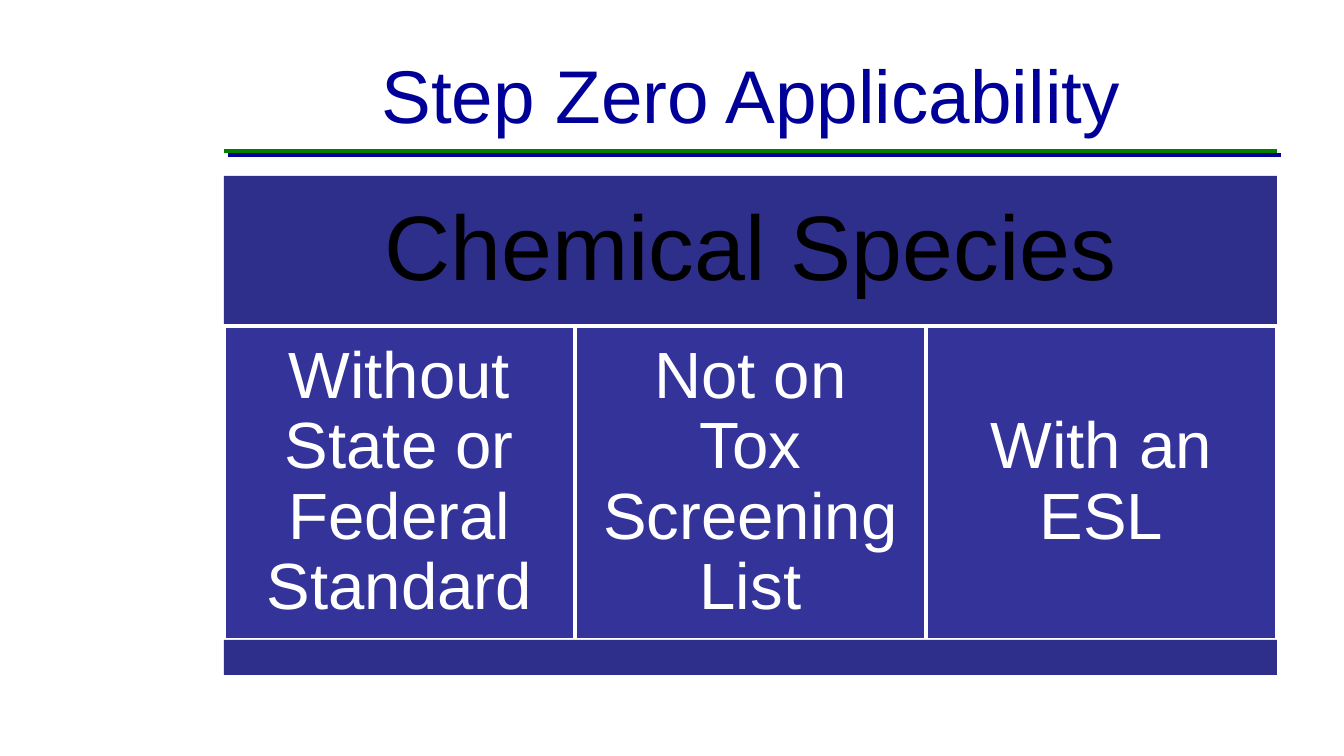
from lxml import etree
from pptx import Presentation
from pptx import util as u
from pptx.dml.color import RGBColor
from pptx.enum import shapes, text
from pptx.oxml import ns

PX = 914400 / 134.4
FONT = "Arial"
COLORS = {
    "title": "000099",
    "rule": "008000",
    "shade": "C0C0C0",
    "band": "2E2E8B",
    "cell": "333399",
    "heading": "000000",
    "white": "FFFFFF",
}


def px(length):
    return u.Emu(round(length * PX))


def rgb(name):
    return RGBColor.from_string(COLORS[name])


def shadow(color):
    effects = etree.Element(ns.qn("a:effectLst"))
    outer = etree.SubElement(effects, ns.qn("a:outerShdw"), blurRad="0",
                             dist=str(u.Pt(2.8)), dir="2700000", algn="ctr", rotWithShape="0")
    etree.SubElement(outer, ns.qn("a:srgbClr"), val=COLORS[color])
    return effects


class Deck:
    def __init__(self, width, height):
        self.presentation = Presentation()
        self.presentation.slide_width = px(width)
        self.presentation.slide_height = px(height)
        self.slide = self.presentation.slides.add_slide(self.presentation.slide_layouts[5])

    def label(self, frame, words, size, color, inset=None, spacing=1.0):
        frame.word_wrap = True
        frame.auto_size = text.MSO_AUTO_SIZE.NONE
        frame.vertical_anchor = text.MSO_ANCHOR.MIDDLE
        if inset is not None:
            frame.margin_left = frame.margin_right = px(inset)
            frame.margin_top = frame.margin_bottom = px(inset)
        paragraph = frame.paragraphs[0]
        paragraph.alignment = text.PP_ALIGN.CENTER
        paragraph.line_spacing = spacing
        run = paragraph.add_run()
        run.text = words
        run.font.name = FONT
        run.font.size = u.Pt(size)
        run.font.color.rgb = rgb(color)
        return run

    def title(self, words, left, top, width, height):
        heading = self.slide.shapes.title
        heading.left, heading.top = px(left), px(top)
        heading.width, heading.height = px(width), px(height)
        run = self.label(heading.text_frame, words, 40, "title")
        properties = run._r.get_or_add_rPr()
        properties.find(ns.qn("a:solidFill")).addnext(shadow("shade"))

    def rule(self, left, y, width):
        line = self.slide.shapes.add_connector(
            shapes.MSO_CONNECTOR.STRAIGHT, px(left), px(y), px(left + width), px(y))
        line.line.color.rgb = rgb("rule")
        line.line.width = u.Pt(2.25)
        line._element.spPr.append(shadow("title"))

    def group(self):
        return self.slide.shapes.add_group_shape()

    def block(self, group, left, top, width, height, fill, outline=None):
        block = group.shapes.add_shape(
            shapes.MSO_SHAPE.RECTANGLE, px(left), px(top), px(width), px(height))
        block.shadow.inherit = False
        block.fill.solid()
        block.fill.fore_color.rgb = rgb(fill)
        if outline:
            block.line.color.rgb = rgb(outline)
            block.line.width = u.Pt(2)
        else:
            block.line.fill.background()
        return block


def main():
    left, width = 224, 1053
    deck = Deck(1344, 756)
    deck.rule(left, 151, width)
    deck.title("Step Zero Applicability", left, 31, width, 126)

    table = deck.group()
    header = deck.block(table, left, 176, width, 149, "band")
    deck.label(header.text_frame, "Chemical Species", 49, "heading", 27, 0.9)

    criteria = ["Without State or Federal Standard", "Not on Tox Screening List", "With an ESL"]
    column = width // len(criteria)
    for index, criterion in enumerate(criteria):
        cell = deck.block(table, left + index * column, 326, column, 314, "cell", "white")
        deck.label(cell.text_frame, criterion, 35, "white", 20, 0.9)

    deck.block(table, left, 640, width, 35, "band")
    deck.presentation.save("out.pptx")


if __name__ == "__main__":
    main()
